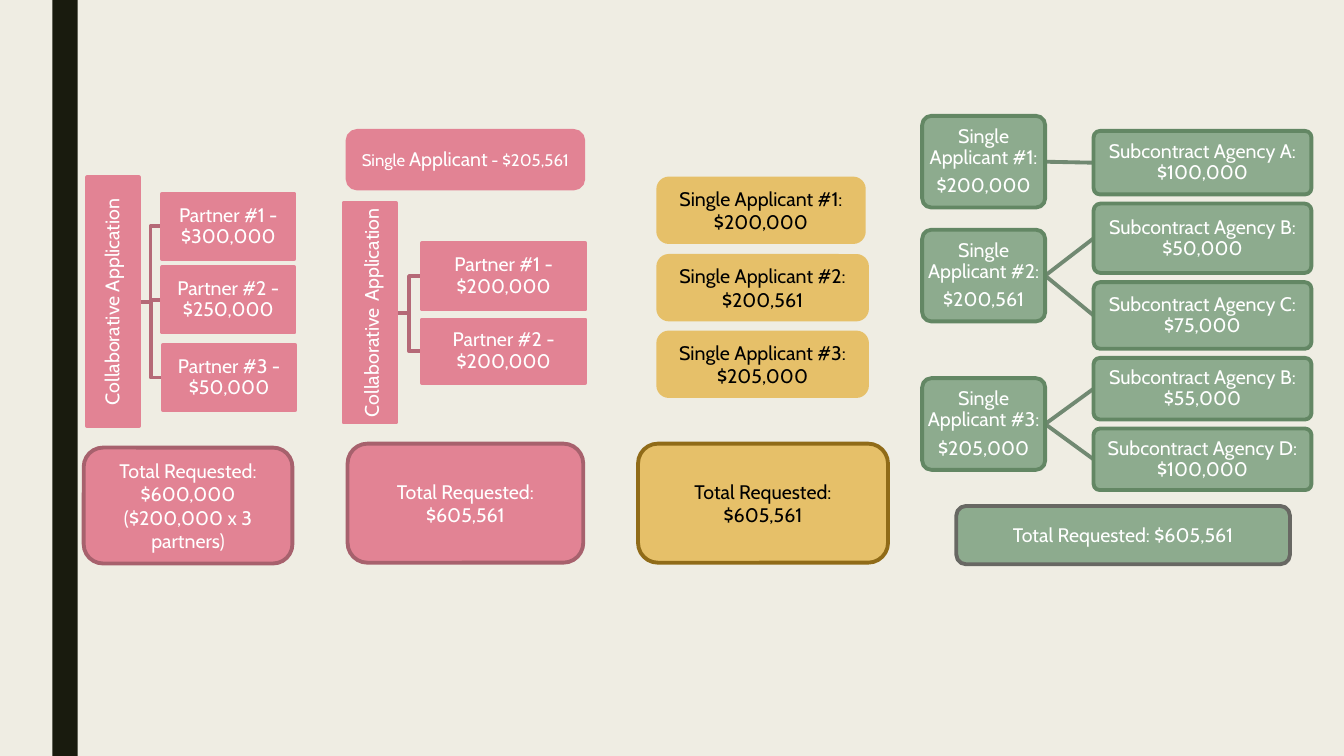
from dataclasses import dataclass

from lxml.etree import SubElement
from pptx import Presentation
from pptx.dml.color import RGBColor
from pptx.enum.shapes import MSO_CONNECTOR, MSO_SHAPE
from pptx.enum.text import MSO_ANCHOR, PP_ALIGN
from pptx.oxml.ns import qn
from pptx.shapes.autoshape import Shape
from pptx.slide import Slide
from pptx.util import Cm, Pt

COLORS = {
    "background": "EFEDE3",
    "bar": "191B0E",
    "pink": "E28394",
    "pink_edge": "A7616D",
    "pink_link": "B56977",
    "gold": "E6C069",
    "gold_edge": "906B18",
    "green": "8DAB8E",
    "green_edge": "638764",
    "green_link": "718972",
    "gray": "686863",
    "white": "FFFFFF",
    "black": "000000",
}
FONT = "Cabin"
LINE_WIDTH = Pt(2.75)
RIGHT, LEFT = 3, 1


@dataclass(frozen=True)
class Style:
    fill: str
    edge: str
    ink: str = "white"
    preset: MSO_SHAPE = MSO_SHAPE.ROUNDED_RECTANGLE
    radius: float | None = None
    margins: tuple[float, float] = (0.25, 0.13)
    line_spacing: float = 1.0
    space_after: float = 0
    upright: bool = False


@dataclass(frozen=True)
class Span:
    text: str
    size: float = 14


@dataclass(frozen=True)
class Block:
    left: float
    top: float
    width: float
    height: float
    style: Style
    paragraphs: tuple[tuple[Span, ...], ...]


@dataclass(frozen=True)
class Branch:
    parent: Block
    children: tuple[Block, ...]
    connector: MSO_CONNECTOR
    color: str


TIGHT = {"margins": (0.03, 0.03), "line_spacing": 0.9, "space_after": 5}
PARTNER = Style("pink", "pink", preset=MSO_SHAPE.RECTANGLE, **TIGHT)
COLLABORATION = Style("pink", "pink", preset=MSO_SHAPE.RECTANGLE, upright=True, **TIGHT)
PINK_SINGLE = Style("pink", "pink", margins=(0.13, 0.13), line_spacing=0.9, space_after=5)
PINK_TOTAL = Style("pink", "pink_edge")
GOLD_SINGLE = Style("gold", "gold", "black")
GOLD_TOTAL = Style("gold", "gold_edge", "black")
GREEN_BOX = Style("green", "green_edge", radius=0.1, **TIGHT)
GREEN_TOTAL = Style("green", "gray")


def plain(*lines: str) -> tuple[tuple[Span, ...], ...]:
    return tuple((Span(line),) for line in lines)


def partner(number: int, amount: str, left: float, top: float, width: float, height: float) -> Block:
    return Block(left, top, width, height, PARTNER, plain(f"Partner #{number} - {amount}"))


def applicant(number: int, amount: str, top: float) -> Block:
    return Block(23.24, top, 3.1, 2.31, GREEN_BOX, plain(f"Single Applicant #{number}:", amount))


def agency(letter: str, amount: str, top: float, height: float) -> Block:
    return Block(27.56, top, 5.49, height, GREEN_BOX, plain(f"Subcontract Agency {letter}: {amount}"))


def gold_single(number: int, amount: str, top: float, width: float) -> Block:
    return Block(16.59, top, width, 1.6, GOLD_SINGLE, plain(f"Single Applicant #{number}:", amount))


BRANCHES = (
    Branch(
        Block(2.2, 4.47, 1.3, 6.27, COLLABORATION, plain("Collaborative Application")),
        (
            partner(1, "$300,000", 4.09, 4.88, 3.33, 1.65),
            partner(2, "$250,000", 4.09, 6.73, 3.33, 1.65),
            partner(3, "$50,000", 4.11, 8.69, 3.33, 1.65),
        ),
        MSO_CONNECTOR.ELBOW, "pink_link",
    ),
    Branch(
        Block(8.66, 5.11, 1.32, 5.54, COLLABORATION,
              ((Span("Collaborative"), Span(" ", 20), Span("Application")),)),
        (
            partner(1, "$200,000", 10.64, 6.12, 4.11, 1.68),
            partner(2, "$200,000", 10.64, 8.05, 4.11, 1.6),
        ),
        MSO_CONNECTOR.ELBOW, "pink_link",
    ),
    Branch(applicant(1, "$200,000", 2.92), (agency("A", "$100,000", 3.3, 1.6),),
           MSO_CONNECTOR.STRAIGHT, "green_link"),
    Branch(applicant(2, "$200,561", 5.79),
           (agency("B", "$50,000", 5.13, 1.75), agency("C", "$75,000", 7.11, 1.68)),
           MSO_CONNECTOR.STRAIGHT, "green_link"),
    Branch(applicant(3, "$205,000", 9.53),
           (agency("B", "$55,000", 9.02, 1.55), agency("D", "$100,000", 10.8, 1.55)),
           MSO_CONNECTOR.STRAIGHT, "green_link"),
)

SHARED_TOTAL = plain("Total Requested: $605,561")
BLOCKS = (
    Block(8.76, 3.3, 5.94, 1.45, PINK_SINGLE,
          ((Span("Single ", 12), Span("Applicant"), Span(" - $205,561", 12)),)),
    gold_single(1, "$200,000", 4.5, 5.18),
    gold_single(2, "$200,561", 6.45, 5.26),
    gold_single(3, "$205,000", 8.38, 5.26),
    Block(2.11, 11.28, 5.26, 2.92, PINK_TOTAL,
          plain("Total Requested: $600,000", "($200,000 x 3 partners)")),
    Block(8.76, 11.18, 5.94, 3, PINK_TOTAL, SHARED_TOTAL),
    Block(16.08, 11.18, 6.3, 3, GOLD_TOTAL, SHARED_TOTAL),
    Block(24.1, 12.75, 8.41, 1.47, GREEN_TOTAL, SHARED_TOTAL),
)


def color(name: str) -> RGBColor:
    return RGBColor.from_string(COLORS[name])


def apply(target: object, values: dict[str, object]) -> None:
    for name, value in values.items():
        setattr(target, name, value)


def draw_bar(page: Slide) -> None:
    bar = page.shapes.add_shape(MSO_SHAPE.RECTANGLE, Cm(1.32), 0, Cm(0.64), Cm(19.05))
    bar.shadow.inherit = False
    bar.fill.solid()
    bar.fill.fore_color.rgb = color("bar")
    bar.line.fill.background()


def draw_block(page: Slide, block: Block) -> Shape:
    style = block.style
    box = page.shapes.add_shape(
        style.preset, Cm(block.left), Cm(block.top), Cm(block.width), Cm(block.height))
    box.shadow.inherit = False
    if style.radius is not None:
        box.adjustments[0] = style.radius
    box.fill.solid()
    box.fill.fore_color.rgb = color(style.fill)
    apply(box.line, {"width": LINE_WIDTH})
    box.line.color.rgb = color(style.edge)
    side, end = map(Cm, style.margins)
    frame = box.text_frame
    apply(frame, {"word_wrap": True, "vertical_anchor": MSO_ANCHOR.MIDDLE,
                  "margin_left": side, "margin_right": side,
                  "margin_top": end, "margin_bottom": end})
    if style.upright:
        box.element.txBody.find(qn("a:bodyPr")).set("vert", "vert270")
    for index, spans in enumerate(block.paragraphs):
        para = frame.add_paragraph() if index else frame.paragraphs[0]
        apply(para, {"alignment": PP_ALIGN.CENTER, "line_spacing": style.line_spacing,
                     "space_after": Pt(style.space_after)})
        for item in spans:
            span = para.add_run()
            span.text = item.text
            apply(span.font, {"name": FONT, "size": Pt(item.size)})
            span.font.color.rgb = color(style.ink)
    return box


def draw_branch(page: Slide, branch: Branch) -> None:
    parent = draw_block(page, branch.parent)
    for child in branch.children:
        box = draw_block(page, child)
        link = page.shapes.add_connector(branch.connector, 0, 0, 0, 0)
        link.begin_connect(parent, RIGHT)
        link.end_connect(box, LEFT)
        link.line.width = LINE_WIDTH
        link.line.color.rgb = color(branch.color)
        SubElement(link.element.spPr, qn("a:effectLst"))
        link.element.getparent().insert(3, link.element)


def main() -> None:
    deck = Presentation()
    apply(deck, {"slide_width": Cm(33.87), "slide_height": Cm(19.05)})
    page = deck.slides.add_slide(deck.slide_layouts[6])
    page.background.fill.solid()
    page.background.fill.fore_color.rgb = color("background")
    draw_bar(page)
    for branch in BRANCHES:
        draw_branch(page, branch)
    for block in BLOCKS:
        draw_block(page, block)
    deck.save("out.pptx")


if __name__ == "__main__":
    main()
